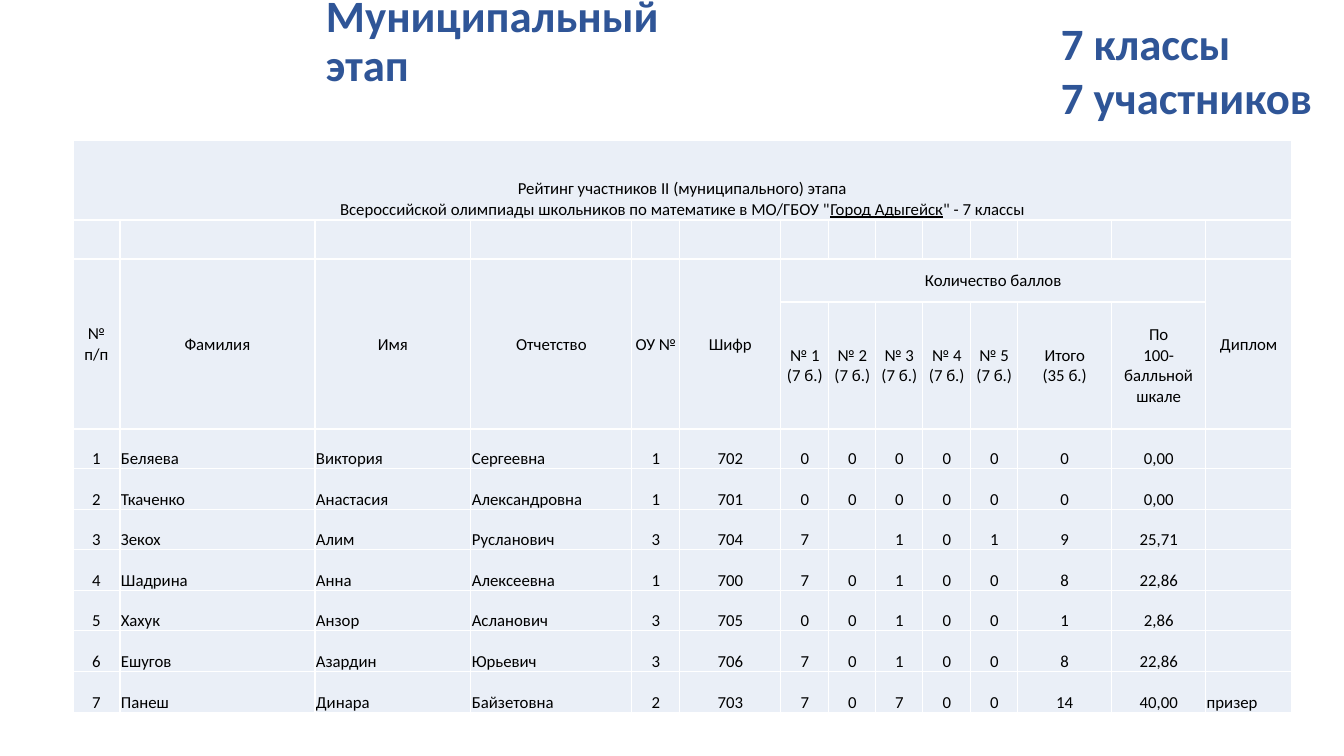
from dataclasses import dataclass

from lxml import etree
from pptx import Presentation
from pptx.dml.color import RGBColor
from pptx.enum import text
from pptx.oxml import ns
from pptx import util as u


@dataclass(frozen=True)
class Theme:
    font: str = "Calibri"
    heading: str = "2F5597"
    body: str = "000000"
    cell: str = "EAEFF7"
    border: str = "FFFFFF"
    heading_size: int = 32
    body_size: int = 12
    border_width: int = 1


THEME = Theme()
SLIDE_SIZE = 1344, 756
LEFT, CENTER = text.PP_ALIGN.LEFT, text.PP_ALIGN.CENTER
MIDDLE, BOTTOM = text.MSO_ANCHOR.MIDDLE, text.MSO_ANCHOR.BOTTOM

COLUMN_WIDTHS = [47, 195, 156, 161, 48, 101, 48, 47, 47, 48, 47, 94, 94, 86]
HEADER_HEIGHTS = [80, 39, 43, 127]
PUPILS_HEIGHT = 284
FIRST_SCORE, DIPLOMA = 6, 13
LEFT_ALIGNED = {1, 2, 3, DIPLOMA}

MAIN_HEADERS = ["№\nп/п", "Фамилия", "Имя", "Отчетство", "ОУ №", "Шифр"]
SCORE_HEADERS = [f"№ {task}\n(7 б.)" for task in range(1, 6)] + [
    "Итого\n(35 б.)", "По\n100-балльной\nшкале"]
PUPILS = [
    ("Беляева", "Виктория", "Сергеевна", 1, 702, 0, 0, 0, 0, 0, 0, "0,00", ""),
    ("Ткаченко", "Анастасия", "Александровна", 1, 701, 0, 0, 0, 0, 0, 0, "0,00", ""),
    ("Зекох", "Алим", "Русланович", 3, 704, 7, "", 1, 0, 1, 9, "25,71", ""),
    ("Шадрина", "Анна", "Алексеевна", 1, 700, 7, 0, 1, 0, 0, 8, "22,86", ""),
    ("Хахук", "Анзор", "Асланович", 3, 705, 0, 0, 1, 0, 0, 1, "2,86", ""),
    ("Ешугов", "Азардин", "Юрьевич", 3, 706, 7, 0, 1, 0, 0, 8, "22,86", ""),
    ("Панеш", "Динара", "Байзетовна", 2, 703, 7, 0, 7, 0, 0, 14, "40,00", "призер"),
]


def px(length):
    return u.Emu(round(length * u.Inches(1) / 100.8))


def set_font(paragraph, size, color, bold=False):
    font = paragraph.font
    font.name, font.size, font.bold = THEME.font, u.Pt(size), bold
    font.color.rgb = RGBColor.from_string(color)


def add_heading(slide, wording, left, top, width, height):
    box = slide.shapes.add_textbox(px(left), px(top), px(width), px(height))
    box.text_frame.word_wrap = True
    paragraph = box.text_frame.paragraphs[0]
    paragraph.text = wording
    set_font(paragraph, THEME.heading_size, THEME.heading, bold=True)
    return box.text_frame


def style_cell(cell):
    """Gives a cell its white borders, pale fill, narrow margins and font."""
    properties = cell._tc.get_or_add_tcPr()
    for side in ("a:lnL", "a:lnR", "a:lnT", "a:lnB"):
        line = etree.SubElement(properties, ns.qn(side), w=str(u.Pt(THEME.border_width)))
        fill = etree.SubElement(line, ns.qn("a:solidFill"))
        etree.SubElement(fill, ns.qn("a:srgbClr"), val=THEME.border)
    cell.fill.solid()
    cell.fill.fore_color.rgb = RGBColor.from_string(THEME.cell)
    cell.margin_left = cell.margin_right = cell.margin_top = px(1)
    cell.margin_bottom = 0
    set_font(cell.text_frame.paragraphs[0], THEME.body_size, THEME.body)


def write_cell(cell, wording, align=CENTER, anchor=MIDDLE):
    paragraph = cell.text_frame.paragraphs[0]
    paragraph.text = str(wording)
    paragraph.alignment = align
    cell.vertical_anchor = anchor
    return paragraph


def write_caption(rating):
    caption = rating.cell(0, 0)
    caption.merge(rating.cell(0, DIPLOMA))
    paragraph = write_cell(
        caption,
        "Рейтинг участников II (муниципального) этапа\n"
        'Всероссийской олимпиады школьников по математике в МО/ГБОУ "',
        anchor=BOTTOM)
    town = paragraph.add_run()
    town.text = "Город Адыгейск"
    town.font.underline = True
    paragraph.add_run().text = '" - 7 классы'


def write_headers(rating):
    for column, wording in [*enumerate(MAIN_HEADERS), (DIPLOMA, "Диплом")]:
        rating.cell(2, column).merge(rating.cell(3, column))
        write_cell(rating.cell(2, column), wording)
    scores = rating.cell(2, FIRST_SCORE)
    scores.merge(rating.cell(2, DIPLOMA - 1))
    write_cell(scores, "Количество баллов")
    for column, wording in enumerate(SCORE_HEADERS, FIRST_SCORE):
        write_cell(rating.cell(3, column), wording)


def write_pupils(rating):
    for number, pupil in enumerate(PUPILS, 1):
        row = len(HEADER_HEIGHTS) + number - 1
        for column, value in enumerate((number, *pupil)):
            align = LEFT if column in LEFT_ALIGNED else CENTER
            write_cell(rating.cell(row, column), value, align, BOTTOM)


def add_rating(slide, left, top):
    count = len(PUPILS)
    edges = [PUPILS_HEIGHT * i // count for i in range(count + 1)]
    heights = HEADER_HEIGHTS + [low - high for high, low in zip(edges, edges[1:])]
    rating = slide.shapes.add_table(
        len(heights), len(COLUMN_WIDTHS), px(left), px(top),
        px(sum(COLUMN_WIDTHS)), px(sum(heights))).table
    rating.first_row = rating.horz_banding = False
    for column, width in zip(rating.columns, COLUMN_WIDTHS):
        column.width = px(width)
    for row, height in zip(rating.rows, heights):
        row.height = px(height)
    for cell in rating.iter_cells():
        style_cell(cell)
    write_caption(rating)
    write_headers(rating)
    write_pupils(rating)


def main():
    deck = Presentation()
    deck.slide_width, deck.slide_height = map(px, SLIDE_SIZE)
    slide = deck.slides.add_slide(deck.slide_layouts[6])

    stage = add_heading(slide, "Муниципальный этап", 316, 11, 421, 63)
    stage.vertical_anchor = MIDDLE
    stage.paragraphs[0].alignment = text.PP_ALIGN.JUSTIFY
    stage.paragraphs[0].line_spacing = 0.9

    grade = add_heading(slide, "7 классы\n7 участников", 1051, 11, 278, 119)
    grade.auto_size = text.MSO_AUTO_SIZE.SHAPE_TO_FIT_TEXT

    add_rating(slide, 73, 140)
    deck.save("out.pptx")


if __name__ == "__main__":
    main()
